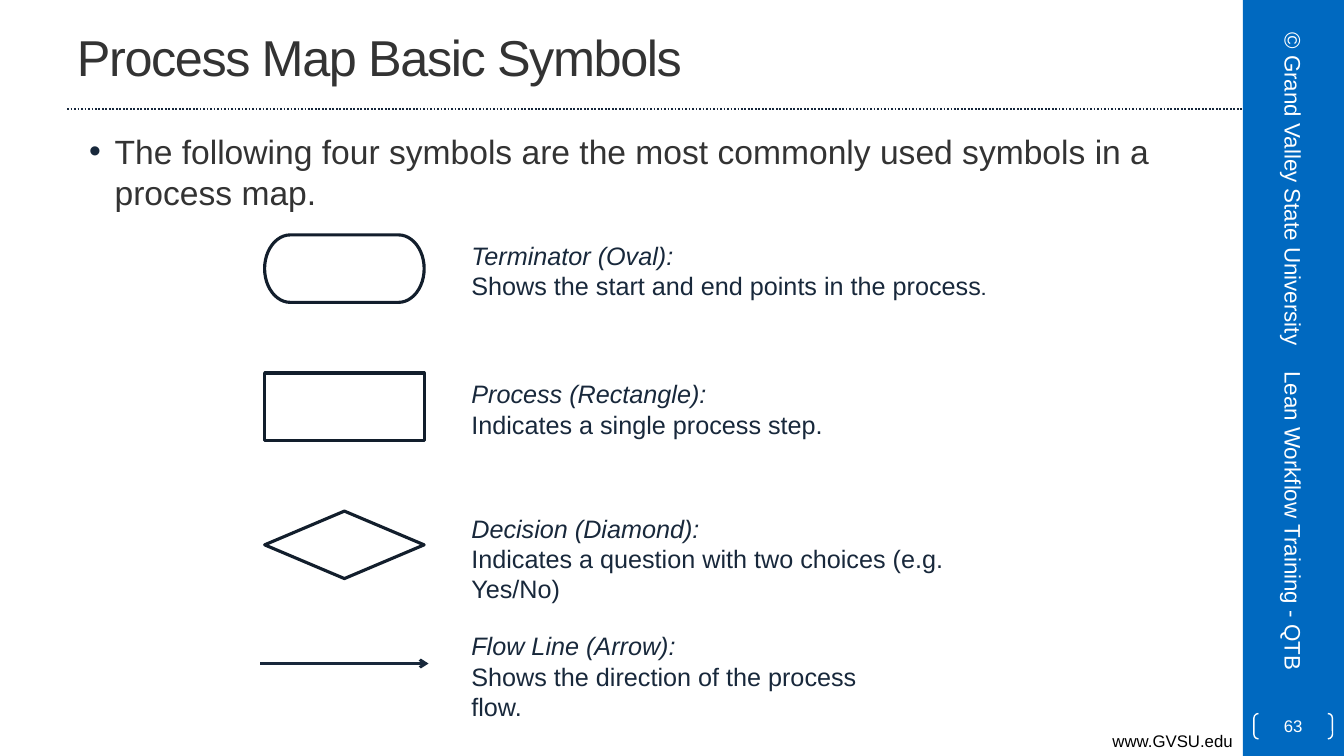
import dataclasses

import pptx
import pptx.dml.color
import pptx.enum.dml
import pptx.enum.shapes
import pptx.enum.text
import pptx.oxml.ns
import pptx.util
from lxml import etree

Cm = pptx.util.Cm
Pt = pptx.util.Pt
SHAPE = pptx.enum.shapes.MSO_SHAPE
ALIGN = pptx.enum.text.PP_ALIGN
ANCHOR = pptx.enum.text.MSO_ANCHOR


@dataclasses.dataclass(frozen=True)
class Theme:
    """Colours, fonts and type sizes of the slide."""
    font: str = "Arial"
    accent_font: str = "Cabin"
    band: str = "0069C0"
    rule: str = "17273B"
    outline: str = "121E2C"
    ink: str = "18283B"
    heading: str = "333333"
    white: str = "FFFFFF"
    black: str = "000000"
    title_size: int = 36
    body_size: int = 24
    caption_size: int = 18
    band_size: int = 16
    small_size: int = 12


@dataclasses.dataclass(frozen=True)
class Box:
    """A region in centimetres."""
    left: float
    top: float
    width: float
    height: float

    def lengths(self):
        """Return the four lengths for python-pptx."""
        return [Cm(value) for value in (self.left, self.top, self.width, self.height)]


THEME = Theme()
SYMBOLS = [
    (SHAPE.FLOWCHART_TERMINATOR, 0, 13.67, "Terminator (Oval):",
     ["Shows the start and end points in the process", "."]),
    (SHAPE.FLOWCHART_PROCESS, 3.5, 11.63, "Process (Rectangle):",
     ["Indicates a single process step."]),
    (SHAPE.FLOWCHART_DECISION, 6.88, 13.87, "Decision (Diamond):",
     ["Indicates a question with two choices (e.g. Yes/No)"]),
    (None, 9.85, 11.63, "Flow Line (Arrow):",
     ["Shows the direction of the process flow."]),
]


def colour(value):
    """Turn a hex string into a colour."""
    return pptx.dml.color.RGBColor.from_string(value)


def add_element(parent, tag, **attributes):
    """Append a DrawingML element with the given attributes."""
    return etree.SubElement(parent, pptx.oxml.ns.qn(tag), attributes)


def style_para(para, size, ink, align=ALIGN.LEFT, italic=False):
    """Set alignment and font of a paragraph."""
    para.alignment = align
    para.font.name = THEME.font
    para.font.size = Pt(size)
    para.font.italic = italic
    para.font.color.rgb = colour(ink)


def add_text(page, box, text, size, ink, align=ALIGN.LEFT, anchor=ANCHOR.TOP):
    """Add a wrapping one-paragraph text box."""
    holder = page.shapes.add_textbox(*box.lengths())
    frame = holder.text_frame
    frame.word_wrap = True
    frame.vertical_anchor = anchor
    para = frame.paragraphs[0]
    para.add_run().text = text
    style_para(para, size, ink, align)
    return holder


def add_outline(page, kind, box, line_colour, width):
    """Add an unfilled preset shape."""
    shape = page.shapes.add_shape(kind, *box.lengths())
    shape.shadow.inherit = False
    shape.fill.background()
    shape.line.color.rgb = colour(line_colour)
    shape.line.width = Pt(width)
    return shape


def add_line(page, left, right, height, line_colour, width):
    """Add a horizontal line without shadow."""
    line = page.shapes.add_connector(
        pptx.enum.shapes.MSO_CONNECTOR.STRAIGHT,
        Cm(left), Cm(height), Cm(right), Cm(height))
    line.line.color.rgb = colour(line_colour)
    line.line.width = Pt(width)
    return line


def finish_line(line):
    """Switch off the shadow of a finished line."""
    add_element(line._element.spPr, "a:effectLst")


def draw_sidebar(page, box):
    """Draw the blue band with its rotated labels and page number."""
    band = page.shapes.add_shape(SHAPE.RECTANGLE, *box.lengths())
    band.shadow.inherit = False
    band.fill.solid()
    band.fill.fore_color.rgb = colour(THEME.band)
    band.line.fill.background()
    length, depth = 8.69, 1.35
    labels = [("© Grand Valley State University", 4.76, ALIGN.CENTER),
              ("Lean Workflow Training - QTB", 13.45, ALIGN.LEFT)]
    for text, middle, align in labels:
        area = Box(box.left + (box.width - length) / 2,
                   box.top + middle - depth / 2, length, depth)
        label = add_text(page, area, text, THEME.band_size, THEME.white,
                         align, ANCHOR.MIDDLE)
        label.rotation = 90
    badge = add_outline(page, SHAPE.DOUBLE_BRACKET,
                        Box(box.left + 0.28, box.top + 17.98, 1.98, 0.64),
                        THEME.white, 1)
    badge.adjustments[0] = 0.18
    frame = badge.text_frame
    frame.margin_left = frame.margin_right = Cm(0)
    frame.margin_top = frame.margin_bottom = Cm(0)
    frame.vertical_anchor = ANCHOR.MIDDLE
    frame.text = "63"
    style_para(frame.paragraphs[0], THEME.small_size, THEME.white, ALIGN.CENTER)


def draw_header(page, box):
    """Draw the title and the dotted rule under it."""
    title = add_text(page, Box(box.left, box.top + 0.08, 28.22, box.height - 0.08),
                     "Process Map Basic Symbols", THEME.title_size,
                     THEME.heading, anchor=ANCHOR.MIDDLE)
    span = title.text_frame.paragraphs[0].runs[0]
    span._r.get_or_add_rPr().set("spc", "-100")
    rule = add_line(page, box.left, box.left + box.width,
                    box.top + box.height, THEME.rule, 1.25)
    rule.line.dash_style = pptx.enum.dml.MSO_LINE.ROUND_DOT
    finish_line(rule)


def draw_intro(page, box):
    """Draw the bulleted introduction."""
    frame = page.shapes.add_textbox(*box.lengths()).text_frame
    frame.word_wrap = True
    para = frame.paragraphs[0]
    para.add_run().text = ("The following four symbols are the most commonly "
                           "used symbols in a process map.")
    props = para._p.get_or_add_pPr()
    props.set("marL", str(Cm(0.95)))
    props.set("indent", str(Cm(-0.64)))
    add_element(add_element(props, "a:buClr"), "a:srgbClr", val=THEME.ink)
    add_element(props, "a:buFont", typeface=THEME.font)
    add_element(props, "a:buChar", char="•")
    style_para(para, THEME.body_size, THEME.heading)


def draw_symbols(page, box):
    """Draw each symbol beside its caption."""
    width, height, pitch = 4.02, 1.7, 3.48
    for row, (kind, offset, caption_width, name, meaning) in enumerate(SYMBOLS):
        if kind is None:
            arrow = add_line(page, box.left - 0.11, box.left + width + 0.11,
                             box.top + 10.8, THEME.ink, 2)
            add_element(arrow.line._get_or_add_ln(), "a:tailEnd", type="arrow")
            finish_line(arrow)
        else:
            add_outline(page, kind,
                        Box(box.left, box.top + row * pitch, width, height),
                        THEME.outline, 2.25)
        caption = add_text(page, Box(box.left + 4.96, box.top + offset, caption_width, 1.8),
                           name, THEME.caption_size, THEME.ink)
        frame = caption.text_frame
        frame.paragraphs[0].font.italic = True
        para = frame.add_paragraph()
        for text in meaning:
            span = para.add_run()
            span.text = text
            if text == ".":
                span.font.name = THEME.accent_font
        style_para(para, THEME.caption_size, THEME.ink)


def main():
    """Build and save the slide."""
    deck = pptx.Presentation()
    deck.slide_width, deck.slide_height = Cm(33.87), Cm(19.05)
    page = deck.slides.add_slide(deck.slide_layouts[6])
    draw_sidebar(page, Box(31.32, 0, 2.55, 19.05))
    draw_header(page, Box(1.69, 0, 29.63, 2.74))
    draw_intro(page, Box(1.69, 3.18, 28.22, 2.5))
    draw_symbols(page, Box(6.67, 5.92, 18.83, 12.4))
    add_text(page, Box(0, 18.28, 31.32, 0.77), "www.GVSU.edu",
             THEME.small_size, THEME.black, ALIGN.RIGHT)
    deck.save("out.pptx")


if __name__ == "__main__":
    main()
